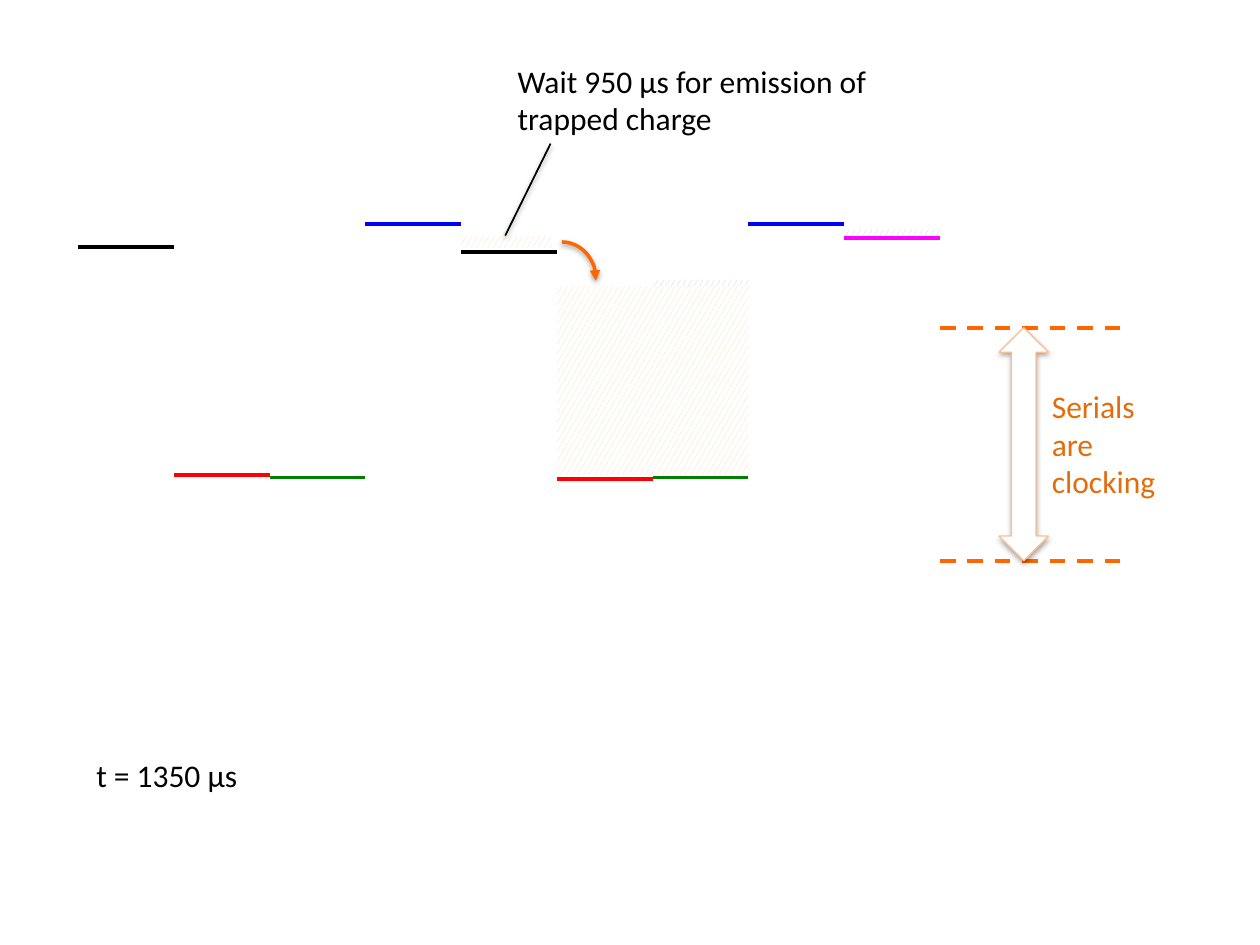
from lxml import etree
from pptx import Presentation
from pptx.dml.color import RGBColor
from pptx.enum.dml import MSO_LINE, MSO_PATTERN
from pptx.enum.shapes import MSO_CONNECTOR, MSO_SHAPE
from pptx.enum.text import MSO_AUTO_SIZE
from pptx.oxml.ns import qn
from pptx.util import Inches, Pt

DASH = MSO_LINE.DASH
CONFETTI = MSO_PATTERN.LARGE_CONFETTI
STRAIGHT = MSO_CONNECTOR.STRAIGHT
RECTANGLE = MSO_SHAPE.RECTANGLE
ARC = MSO_SHAPE.ARC
DOUBLE_ARROW = MSO_SHAPE.UP_DOWN_ARROW
GROW = MSO_AUTO_SIZE.SHAPE_TO_FIT_TEXT

BLACK = RGBColor(0x00, 0x00, 0x00)
WHITE = RGBColor(0xFF, 0xFF, 0xFF)
RED = RGBColor(0xFF, 0x00, 0x00)
GREEN = RGBColor(0x00, 0x80, 0x00)
BLUE = RGBColor(0x00, 0x00, 0xFF)
MAGENTA = RGBColor(0xFF, 0x00, 0xFF)
ORANGE = RGBColor(0xFF, 0x66, 0x00)
DARK_ORANGE = RGBColor(0xE4, 0x6C, 0x0A)
PALE_ORANGE = RGBColor(0xFA, 0xC0, 0x90)
PEACH = RGBColor(0xFC, 0xD5, 0xB5)
LILAC = RGBColor(0xCC, 0xC1, 0xDA)

GRID_LEFT = 0.62
COLUMN = 0.76
CLOCK_HIGH, CLOCK_LOW = 2.6, 4.45
LEVELS = [
    (0, 1.96, BLACK), (1, 3.77, RED), (2, 3.79, GREEN), (3, 1.78, BLUE),
    (4, 2, BLACK), (5, 3.8, RED), (6, 3.79, GREEN), (7, 1.78, BLUE),
    (8, 1.89, MAGENTA),
]


def column_left(column):
    return GRID_LEFT + column * COLUMN


def set_effects(shape, opacity=None, distance=1.6):
    effects = etree.SubElement(shape._element.spPr, qn("a:effectLst"))
    if opacity is None:
        return
    shadow = etree.SubElement(
        effects, qn("a:outerShdw"), blurRad=str(Pt(3.1)),
        dist=str(Pt(distance)), dir="5400000", rotWithShape="0")
    color = etree.SubElement(shadow, qn("a:srgbClr"), val=str(BLACK))
    etree.SubElement(color, qn("a:alpha"), val=str(opacity * 1000))


def add_line(slide, start, end, color, width=2.25, dash=None, opacity=None):
    line = slide.shapes.add_connector(
        STRAIGHT, *(Inches(value) for value in (*start, *end)))
    line.line.color.rgb = color
    line.line.width = Pt(width)
    if dash is not None:
        line.line.dash_style = dash
    set_effects(line, opacity)


def add_level(slide, column, height, color, columns=1, dash=None):
    add_line(slide, (column_left(column), height),
             (column_left(column + columns), height), color, dash=dash)


def add_shape(slide, kind, left, top, width, height):
    return slide.shapes.add_shape(
        kind, Inches(left), Inches(top), Inches(width), Inches(height))


def add_charge(slide, column, top, height, color, width=COLUMN):
    charge = add_shape(slide, RECTANGLE, column_left(column), top, width, height)
    charge.fill.patterned()
    charge.fill.pattern = CONFETTI
    charge.fill.fore_color.rgb = color
    charge.fill.back_color.rgb = WHITE
    charge.line.fill.background()
    set_effects(charge)


def add_clock_arrow(slide):
    arrow = add_shape(slide, DOUBLE_ARROW, 7.93, CLOCK_HIGH, 0.39,
                      CLOCK_LOW - CLOCK_HIGH)
    arrow.fill.solid()
    arrow.fill.fore_color.rgb = WHITE
    arrow.line.color.rgb = PALE_ORANGE
    arrow.line.width = Pt(0.75)
    set_effects(arrow, opacity=35, distance=1.8)


def add_emission_arrow(slide):
    arrow = add_shape(slide, ARC, 4.19, 1.92, 0.54, 0.59)
    arrow.adjustments[0] = 162
    arrow.adjustments[1] = 1.65
    arrow.fill.background()
    arrow.line.color.rgb = ORANGE
    arrow.line.width = Pt(2)
    etree.SubElement(arrow.line._get_or_add_ln(), qn("a:tailEnd"), type="triangle")
    set_effects(arrow, opacity=38)


def add_text(slide, text, left, top, width, height, color=BLACK, size=18):
    box = slide.shapes.add_textbox(
        Inches(left), Inches(top), Inches(width), Inches(height))
    frame = box.text_frame
    frame.word_wrap = True
    frame.auto_size = GROW
    span = frame.paragraphs[0].add_run()
    span.text = text
    span.font.name = "Calibri"
    span.font.size = Pt(size)
    span.font.color.rgb = color


def main():
    deck = Presentation()
    deck.slide_width = Inches(10)
    deck.slide_height = Inches(7.5)
    page = deck.slides.add_slide(deck.slide_layouts[6])

    add_charge(page, 5, 2.27, 1.5, PEACH, width=2 * COLUMN)
    for column, height, color in LEVELS:
        add_level(page, column, height, color)
    for height in (CLOCK_LOW, CLOCK_HIGH):
        add_level(page, 9, height, ORANGE, columns=2, dash=DASH)
    add_clock_arrow(page)
    add_text(page, "Serials are clocking", 8.25, 3.02, 1.23, 1.01,
             color=DARK_ORANGE)
    add_charge(page, 4, 1.87, 0.1, PEACH, width=0.72)
    add_emission_arrow(page)
    add_text(page, "Wait 950 µs for emission of trapped charge",
             4.01, 0.44, 3.33, 0.71)
    add_line(page, (4.37, 1.14), (4.01, 1.87), BLACK, width=1, opacity=38)
    add_text(page, " t = 1350 µs", 0.61, 5.95, 5, 0.4)
    add_charge(page, 8, 1.82, 0.05, LILAC)
    add_charge(page, 6, 2.22, 0.05, LILAC)

    deck.save("out.pptx")


if __name__ == "__main__":
    main()
